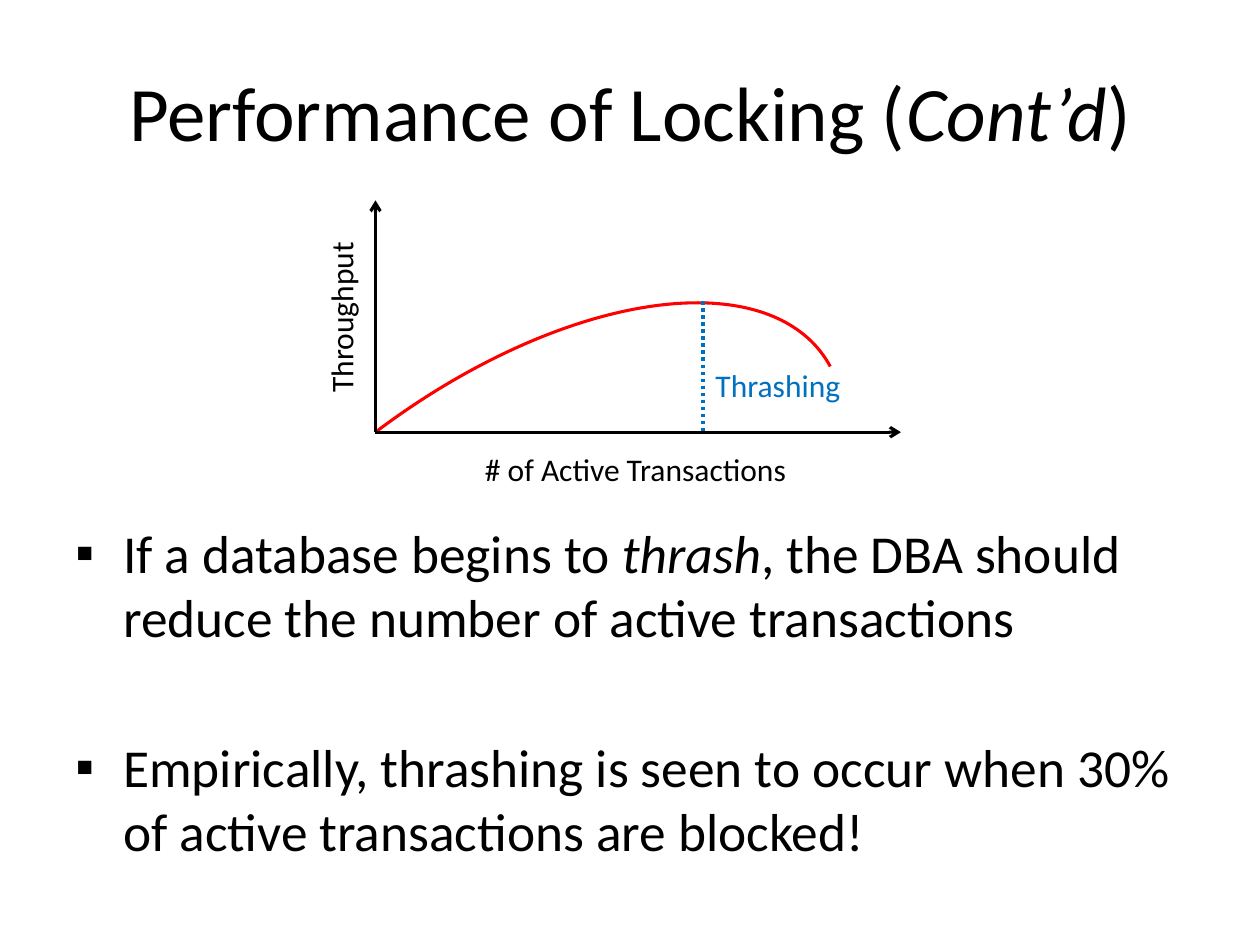
from dataclasses import dataclass
from typing import Optional

from lxml.etree import SubElement
from pptx import Presentation
from pptx.dml.color import RGBColor
from pptx.enum.dml import MSO_LINE_DASH_STYLE as Dash
from pptx.enum.shapes import MSO_CONNECTOR as Conn, MSO_SHAPE as Shape
from pptx.enum.text import MSO_ANCHOR as Anchor, MSO_AUTO_SIZE as Fit, PP_ALIGN as Align
from pptx.oxml.ns import qn
from pptx.util import Emu, Inches, Pt

# Grid of square cells over the whole slide
COLS, ROWS = 100, 75
WIDTH, HEIGHT = Inches(10), Inches(7.5)


@dataclass(frozen=True)
class Theme:
    font: str = "Calibri"
    ink: RGBColor = RGBColor(0, 0, 0)
    curve: RGBColor = RGBColor(255, 0, 0)
    mark: RGBColor = RGBColor(0, 0x70, 0xC0)
    title: float = 44
    body: float = 30.5
    label: float = 18
    stroke: float = 1.75
    dots: float = 2


@dataclass(frozen=True)
class Box:
    col: float
    row: float
    cols: float
    rows: float


@dataclass(frozen=True)
class Label:
    text: str
    box: Box
    color: RGBColor
    turn: float = 0


@dataclass(frozen=True)
class Rule:
    start: tuple[float, float]
    end: tuple[float, float]
    color: RGBColor
    width: float
    dash: Optional[Dash] = None
    arrow: bool = False


@dataclass(frozen=True)
class Point:
    runs: tuple[tuple[str, bool], ...]  # text, italic
    before: float


THEME = Theme()
ORIGIN = (29.8, 34.3)
PEAK = 55.8

TITLE = (("Performance of Locking (", False), ("Cont’d", True), (")", False))
RULES = (
    Rule(ORIGIN, (71.5, ORIGIN[1]), THEME.ink, THEME.stroke, arrow=True),
    Rule(ORIGIN, (ORIGIN[0], 15.9), THEME.ink, THEME.stroke, arrow=True),
    Rule((PEAK, 23.9), (PEAK, ORIGIN[1]), THEME.mark, THEME.dots, Dash.ROUND_DOT),
)
LABELS = (
    Label("# of Active Transactions", Box(37.5, 35.2, 26.2, 4), THEME.ink),
    Label("Throughput", Box(20, 23.1, 14.1, 4), THEME.ink, 270),
    Label("Thrashing", Box(PEAK, 28.6, 12, 4), THEME.mark),
)
POINTS = (
    Point((("If a database begins to ", False), ("thrash", True),
           (", the DBA should reduce the number of active transactions", False)), 2),
    Point((("Empirically, thrashing is seen to occur when 30% "
            "of active transactions are blocked!", False),), 49),
)


def across(cols: float) -> Emu:
    return Emu(round(WIDTH * cols / COLS))


def down(rows: float) -> Emu:
    return Emu(round(HEIGHT * rows / ROWS))


def place(box: Box) -> tuple[Emu, Emu, Emu, Emu]:
    return across(box.col), down(box.row), across(box.cols), down(box.rows)


def style(para, size: float, color: RGBColor) -> None:
    para.font.name = THEME.font
    para.font.size = Pt(size)
    para.font.color.rgb = color


def write(para, runs: tuple[tuple[str, bool], ...]) -> None:
    for text, slant in runs:
        run = para.add_run()
        run.text = text
        if slant:
            run.font.italic = True


def bullet(para) -> None:
    props = para._p.get_or_add_pPr()
    props.set("marL", str(Inches(0.38)))
    props.set("indent", str(-Inches(0.38)))
    SubElement(props, qn("a:buFont"), typeface="Arial")
    SubElement(props, qn("a:buChar"), char="▪")


def draw_title(slide) -> None:
    title = slide.shapes.title
    title.left, title.top, title.width, title.height = place(Box(5, 2.5, 90, 12.5))
    title.text_frame.vertical_anchor = Anchor.MIDDLE
    para = title.text_frame.paragraphs[0]
    para.alignment = Align.CENTER
    style(para, THEME.title, THEME.ink)
    write(para, TITLE)


def draw_points(slide, points: tuple[Point, ...], box: Box) -> None:
    frame = slide.shapes.add_textbox(*place(box)).text_frame
    frame.word_wrap = True
    for i, point in enumerate(points):
        para = frame.add_paragraph() if i else frame.paragraphs[0]
        para.space_before = Pt(point.before)
        bullet(para)
        style(para, THEME.body, THEME.ink)
        write(para, point.runs)


def draw_curve(slide, box: Box) -> None:
    arc = slide.shapes.add_shape(Shape.ARC, *place(box))
    arc.adjustments[0], arc.adjustments[1] = 162, 1.36
    arc.rotation = 322.9
    arc.shadow.inherit = False
    arc.fill.background()
    arc.line.color.rgb = THEME.curve
    arc.line.width = Pt(THEME.stroke)


def draw_rule(slide, rule: Rule) -> None:
    (x1, y1), (x2, y2) = rule.start, rule.end
    line = slide.shapes.add_connector(Conn.STRAIGHT, across(x1), down(y1), across(x2), down(y2))
    line.line.color.rgb = rule.color
    line.line.width = Pt(rule.width)
    if rule.dash:
        line.line.dash_style = rule.dash
    if rule.arrow:
        SubElement(line.line._get_or_add_ln(), qn("a:tailEnd"), type="arrow")
    SubElement(line._element.spPr, qn("a:effectLst"))


def draw_label(slide, label: Label) -> None:
    shape = slide.shapes.add_textbox(*place(label.box))
    shape.rotation = label.turn
    frame = shape.text_frame
    frame.word_wrap = False
    frame.auto_size = Fit.SHAPE_TO_FIT_TEXT
    frame.text = label.text
    style(frame.paragraphs[0], THEME.label, label.color)


def main() -> None:
    deck = Presentation()
    deck.slide_width, deck.slide_height = WIDTH, HEIGHT
    slide = deck.slides.add_slide(deck.slide_layouts.get_by_name("Title Only"))

    # Title and bullets
    draw_title(slide)
    draw_points(slide, POINTS, Box(5, 40.8, 90, 30))

    # Throughput sketch
    draw_curve(slide, Box(7.6, 31, 64.1, 32.7))
    for rule in RULES:
        draw_rule(slide, rule)
    for label in LABELS:
        draw_label(slide, label)

    deck.save("out.pptx")


if __name__ == "__main__":
    main()
